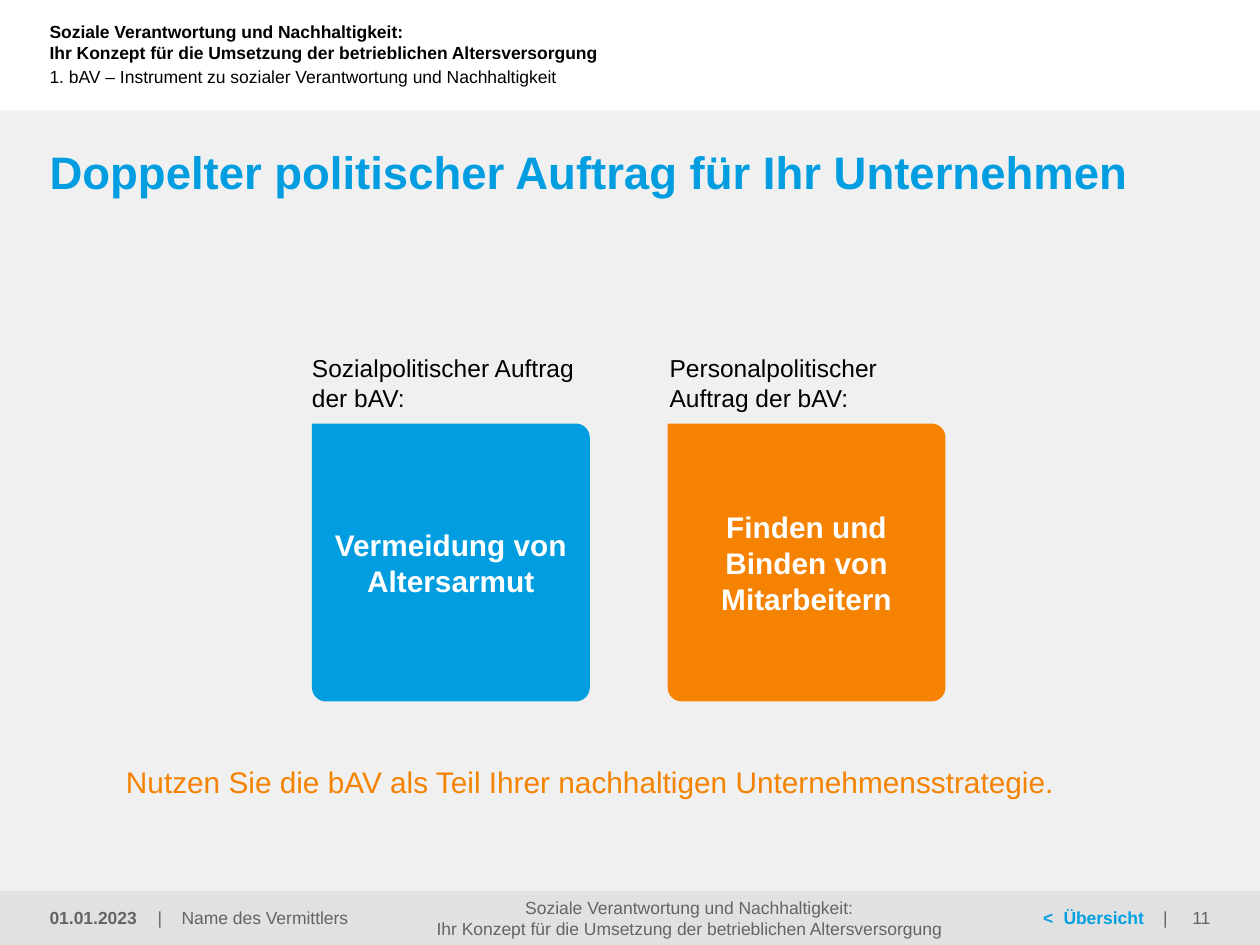
import math
from lxml import etree
from pptx import Presentation, util as u
from pptx.dml.color import RGBColor
from pptx.enum import shapes, text
from pptx.oxml.ns import qn

HUES = {
    "blue": "009EE0", "link": "00A0E1", "orange": "F58200", "black": "000000",
    "white": "FFFFFF", "gray": "646464", "back": "F0F0F0", "foot": "E1E1E1",
}
ALIGN = {"l": text.PP_ALIGN.LEFT, "c": text.PP_ALIGN.CENTER, "r": text.PP_ALIGN.RIGHT}
ANCHOR = {"t": text.MSO_ANCHOR.TOP, "m": text.MSO_ANCHOR.MIDDLE, "b": text.MSO_ANCHOR.BOTTOM}


def write(frame, lines, size=10, hue="black", bold=False, align="l",
          anchor="m", pad=(0, 0, 0, 0), tabs=()):
    """Fill a frame; a line is a string or a list of (string, hue, bold)."""
    frame.word_wrap = True
    frame.vertical_anchor = ANCHOR[anchor]
    (frame.margin_left, frame.margin_top,
     frame.margin_right, frame.margin_bottom) = [u.Cm(n) for n in pad]
    for i, line in enumerate(lines):
        para = frame.add_paragraph() if i else frame.paragraphs[0]
        para.alignment = ALIGN[align]
        if tabs:
            stops = etree.SubElement(para._p.get_or_add_pPr(), qn("a:tabLst"))
            for pos in tabs:
                etree.SubElement(stops, qn("a:tab"), pos=str(u.Cm(pos)), algn="l")
        parts = [(line, hue, bold)] if isinstance(line, str) else line
        for words, tint, heavy in parts:
            run = para.add_run()
            run.text = words
            run.font.name = "Arial"
            run.font.size = u.Pt(size)
            run.font.bold = heavy
            run.font.color.rgb = RGBColor.from_string(HUES[tint])


class Deck:
    """Holds the style and the current slide."""

    def __init__(self, wide, high):
        self.file = Presentation()
        self.file.slide_width, self.file.slide_height = u.Cm(wide), u.Cm(high)
        self.slide = self.file.slides.add_slide(self.file.slide_layouts[6])

    def paint(self, shape, hue):
        shape.shadow.inherit = False
        shape.fill.solid()
        shape.fill.fore_color.rgb = RGBColor.from_string(HUES[hue])
        shape.line.fill.background()

    def band(self, top, high, hue):
        shape = self.slide.shapes.add_shape(
            shapes.MSO_SHAPE.RECTANGLE, 0, u.Cm(top), self.file.slide_width, u.Cm(high))
        self.paint(shape, hue)

    def label(self, x, y, wide, high, *lines, **style):
        box = self.slide.shapes.add_textbox(u.Cm(x), u.Cm(y), u.Cm(wide), u.Cm(high))
        write(box.text_frame, lines, **style)

    def tile(self, x, y, side, hue, words, curve=0.28, steps=10):
        """Square with a sharp top left corner and three round ones."""
        near, far = curve, side - curve
        spots = [(0, 0)]
        for turn, (mx, my) in zip((-90, 0, 90), ((far, near), (far, far), (near, far))):
            for k in range(steps + 1):
                arc = math.radians(turn + 90 * k / steps)
                spots.append((mx + curve * math.cos(arc), my + curve * math.sin(arc)))
        spots = [(u.Cm(x + dx), u.Cm(y + dy)) for dx, dy in spots]
        draw = self.slide.shapes.build_freeform(*spots[0])
        draw.add_line_segments(spots[1:], close=True)
        shape = draw.convert_to_shape()
        self.paint(shape, hue)
        write(shape.text_frame, [words], size=17, hue="white", bold=True,
              align="c", pad=(0.25, 0.13, 0.25, 0.13))


def main():
    deck = Deck(25.4, 19.05)
    theme = ("Soziale Verantwortung und Nachhaltigkeit:",
             "Ihr Konzept für die Umsetzung der betrieblichen Altersversorgung")
    foot, deep = 17.96, 1.09

    # Background bands
    deck.band(2.23, 16.82, "back")
    deck.band(foot, deep, "foot")

    # Header and title
    deck.label(0, 0, 17.73, 1.7, *theme, bold=True, pad=(1, 0.13, 0.25, 0.13))
    deck.label(0, 0.85, 18.16, 1.4,
               "1. bAV – Instrument zu sozialer Verantwortung und Nachhaltigkeit",
               pad=(1, 0, 0, 0))
    deck.label(1, 2.9, 23.4, 1.4, "Doppelter politischer Auftrag für Ihr Unternehmen",
               size=26, hue="blue", bold=True, anchor="t")

    # Two mandates
    side = 5.6
    for x, shift, hue, head, words in (
            (6.29, 0, "blue", "Sozialpolitischer Auftrag der bAV:",
             "Vermeidung von Altersarmut"),
            (13.46, 0.04, "orange", "Personalpolitischer Auftrag der bAV:",
             "Finden und Binden von Mitarbeitern")):
        deck.tile(x, 8.54, side, hue, words)
        deck.label(x + shift, 7.11, side, 1.2, head, size=14, anchor="b")

    # Closing line
    deck.label(2.54, 14.99, 21.87, 1.73,
               "Nutzen Sie die bAV als Teil Ihrer nachhaltigen Unternehmensstrategie.",
               size=17, hue="orange", pad=(0, 0, 0, 0.2))

    # Footer
    deck.label(0, foot, 3.1, deep, "01.01.2023", hue="gray", bold=True,
               pad=(1, 0.13, 0.25, 0.13))
    deck.label(3.18, foot, 6.15, deep, "|\tName des Vermittlers", hue="gray", tabs=[0.48])
    deck.label(8.38, foot, 11.02, deep, *theme, hue="gray", align="c")
    deck.label(17.48, foot, 6.15, deep,
               [("\t<\tÜbersicht", "link", True), ("\t|", "gray", False)],
               tabs=[3.55, 3.96, 5.97])
    deck.label(23.01, foot, 2.39, deep, "11", hue="gray", align="r",
               pad=(0.25, 0.13, 1, 0.13))

    deck.file.save("out.pptx")


if __name__ == "__main__":
    main()
